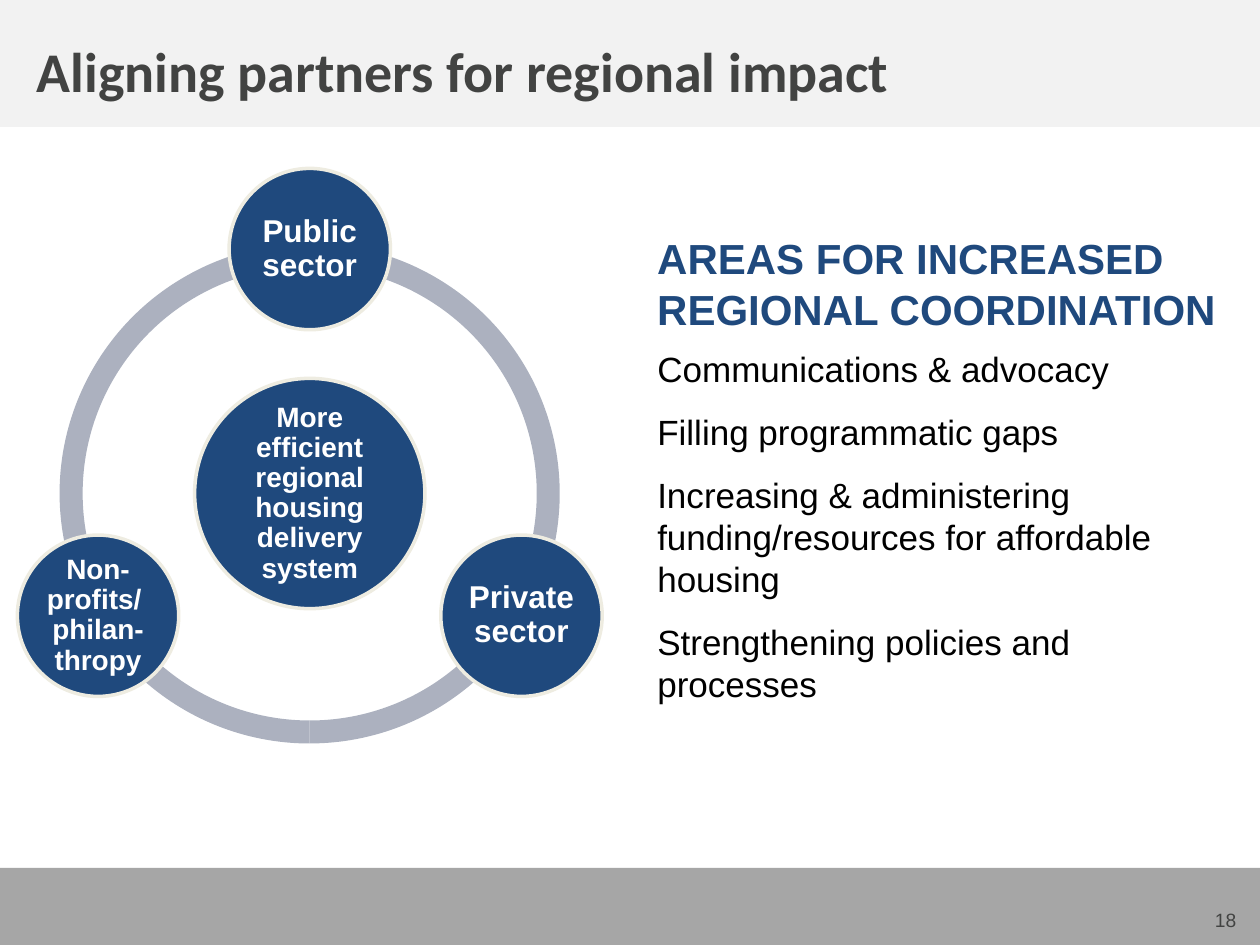
from math import cos, radians, sin

from pptx import Presentation
from pptx.dml.color import RGBColor
from pptx.enum.shapes import MSO_SHAPE
from pptx.enum.text import MSO_ANCHOR, MSO_AUTO_SIZE, PP_ALIGN
from pptx.util import Pt

NAVY = RGBColor(0x1F, 0x49, 0x7D)
CREAM = RGBColor(0xEE, 0xEC, 0xE1)
RING_GRAY = RGBColor(0xAC, 0xB1, 0xBF)
HEADER_GRAY = RGBColor(0xF2, 0xF2, 0xF2)
FOOTER_GRAY = RGBColor(0xA6, 0xA6, 0xA6)
CHARCOAL = RGBColor(0x42, 0x43, 0x42)
WHITE = RGBColor(0xFF, 0xFF, 0xFF)
BLACK = RGBColor(0, 0, 0)

CENTER_X, CENTER_Y = 177, 282
RING_DIAMETER = 285.8
ORBIT_RADIUS = 139.7
HUB_DIAMETER, PARTNER_DIAMETER = 131.6, 92.2

ARCS = [(90, 162), (18, 90), (162, 18)]
PARTNERS = [
    ("Public sector", 18, -90),
    ("Private sector", 18, 30),
    ("Non-profits/ \vphilan-thropy", 16, 150),
]
AREAS = [
    "Communications & advocacy",
    "Filling programmatic gaps",
    "Increasing & administering funding/resources for affordable housing",
    "Strengthening policies and processes",
]


def set_margins(frame, margin):
    """Give a text frame the same inset on all four sides."""
    frame.margin_left = frame.margin_right = Pt(margin)
    frame.margin_top = frame.margin_bottom = Pt(margin)


def format_text(frame, size, color, bold=False, name="Arial", align=PP_ALIGN.LEFT):
    """Format every run in a text frame."""
    for paragraph in frame.paragraphs:
        paragraph.alignment = align
        for run in paragraph.runs:
            run.font.name = name
            run.font.size = Pt(size)
            run.font.bold = bold
            run.font.color.rgb = color


def add_filled_shape(slide, kind, left, top, width, height, color):
    """Add a flat preset shape without outline."""
    shape = slide.shapes.add_shape(kind, Pt(left), Pt(top), Pt(width), Pt(height))
    shape.shadow.inherit = False
    shape.fill.solid()
    shape.fill.fore_color.rgb = color
    shape.line.fill.background()
    return shape


def add_arc(slide, start, end):
    """Add one segment of the ring, with angles in degrees."""
    arc = add_filled_shape(
        slide, MSO_SHAPE.BLOCK_ARC, CENTER_X - RING_DIAMETER / 2,
        CENTER_Y - RING_DIAMETER / 2, RING_DIAMETER, RING_DIAMETER, RING_GRAY)
    arc.adjustments[0] = start * 0.6
    arc.adjustments[1] = end * 0.6
    arc.adjustments[2] = 0.046


def add_circle(slide, text, size, center_x, center_y, diameter):
    """Add a labelled circle around a center point."""
    circle = add_filled_shape(
        slide, MSO_SHAPE.OVAL, center_x - diameter / 2, center_y - diameter / 2,
        diameter, diameter, NAVY)
    circle.line.color.rgb = CREAM
    circle.line.width = Pt(2)
    frame = circle.text_frame
    frame.word_wrap = True
    frame.vertical_anchor = MSO_ANCHOR.MIDDLE
    set_margins(frame, 1.6)
    frame.text = text
    frame.paragraphs[0].line_spacing = 0.9
    format_text(frame, size, WHITE, bold=True, align=PP_ALIGN.CENTER)


def add_text(slide, text, left, top, width, height):
    """Add a wrapping text box and return its frame."""
    box = slide.shapes.add_textbox(Pt(left), Pt(top), Pt(width), Pt(height))
    frame = box.text_frame
    frame.word_wrap = True
    frame.text = text
    return frame


def place_title(slide, text):
    """Move the title placeholder onto the header band and format it."""
    title = slide.shapes.title
    title.element.getparent().append(title.element)
    title.left, title.top, title.width, title.height = Pt(21), Pt(21), Pt(616), Pt(39)
    frame = title.text_frame
    frame.text = text
    frame.auto_size = MSO_AUTO_SIZE.NONE
    frame.vertical_anchor = MSO_ANCHOR.TOP
    set_margins(frame, 0)
    format_text(frame, 32, CHARCOAL, bold=True, name="Calibri")


def add_page_number(slide, number):
    """Add the page number at the bottom right."""
    frame = add_text(slide, number, 538.5, 503.5, 168, 28.5)
    frame.vertical_anchor = MSO_ANCHOR.BOTTOM
    set_margins(frame, 0)
    format_text(frame, 11, CHARCOAL, align=PP_ALIGN.RIGHT)


def add_areas(slide):
    """Add the heading and list of coordination areas."""
    heading = add_text(
        slide, "AREAS FOR INCREASED REGIONAL COORDINATION", 368.5, 129.5, 340, 65.5)
    format_text(heading, 24, NAVY, bold=True)
    areas = add_text(slide, "\n".join(AREAS), 368.5, 195, 325, 213)
    format_text(areas, 20, BLACK)
    for paragraph in areas.paragraphs:
        paragraph.space_after = Pt(12)


def main():
    """Build the slide and save it."""
    presentation = Presentation()
    presentation.slide_width, presentation.slide_height = Pt(720), Pt(540)
    slide = presentation.slides.add_slide(presentation.slide_layouts[5])
    add_filled_shape(slide, MSO_SHAPE.RECTANGLE, 0, 496, 720, 44, FOOTER_GRAY)
    add_filled_shape(slide, MSO_SHAPE.RECTANGLE, 0, 0, 720, 72.5, HEADER_GRAY)
    add_page_number(slide, "18")
    place_title(slide, "Aligning partners for regional impact")
    for start, end in ARCS:
        add_arc(slide, start, end)
    add_circle(slide, "More efficient regional housing delivery system", 16,
               CENTER_X, CENTER_Y, HUB_DIAMETER)
    for text, size, angle in PARTNERS:
        add_circle(slide, text, size,
                   CENTER_X + ORBIT_RADIUS * cos(radians(angle)),
                   CENTER_Y + ORBIT_RADIUS * sin(radians(angle)), PARTNER_DIAMETER)
    add_areas(slide)
    presentation.save("out.pptx")


if __name__ == "__main__":
    main()
